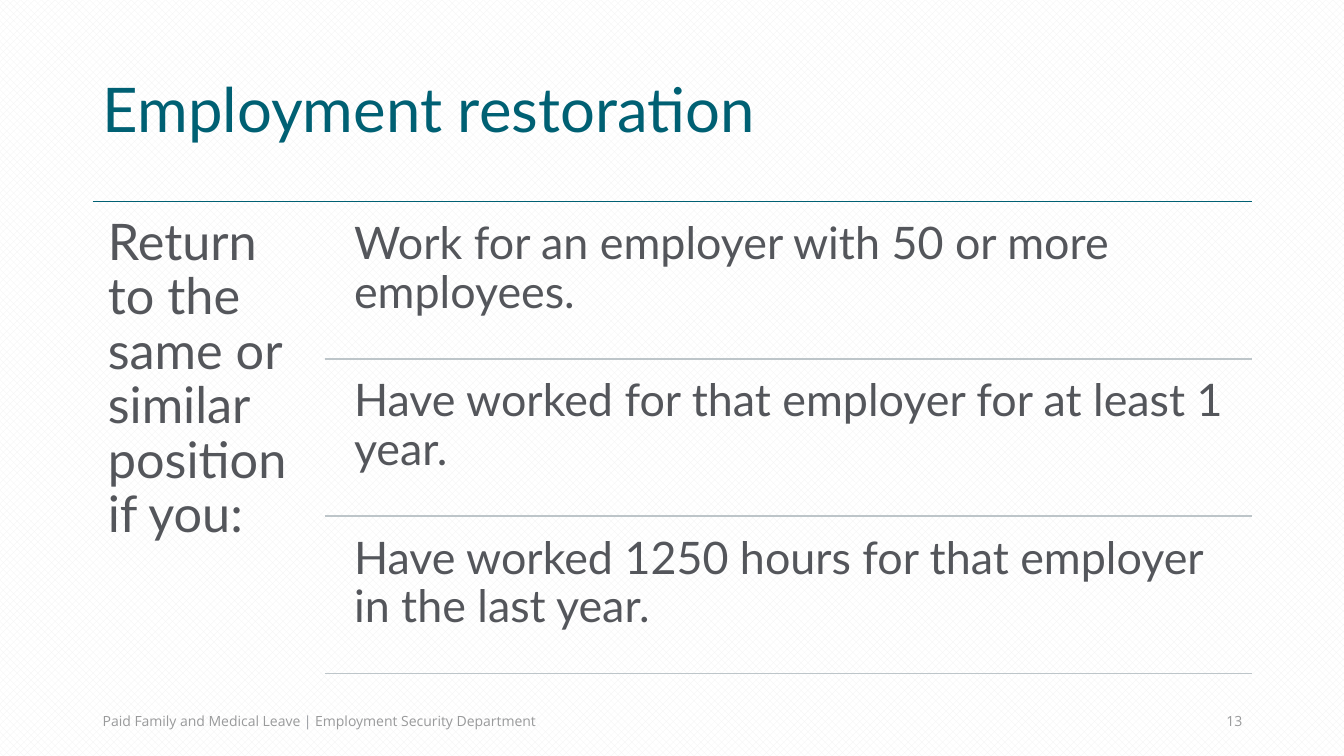
from dataclasses import dataclass

from lxml import etree
from pptx import Presentation
from pptx.dml.color import RGBColor
from pptx.enum.dml import MSO_PATTERN
from pptx.enum.shapes import MSO_CONNECTOR
from pptx.enum.text import MSO_ANCHOR, MSO_AUTO_SIZE, PP_ALIGN
from pptx.oxml.ns import qn
from pptx.util import Inches, Pt

DOTS = MSO_PATTERN.PERCENT_50
LINE = MSO_CONNECTOR.STRAIGHT
TOP, MIDDLE = MSO_ANCHOR.TOP, MSO_ANCHOR.MIDDLE
LEFT, RIGHT = PP_ALIGN.LEFT, PP_ALIGN.RIGHT
FIXED = MSO_AUTO_SIZE.NONE


@dataclass(frozen=True)
class Theme:
    teal: str = "006073"
    ink: str = "54565B"
    rule: str = "BDC5C9"
    muted: str = "999A9B"
    bar: str = "96999F"
    dot: str = "F2F2F2"
    paper: str = "FFFFFF"
    head: str = "Lato"
    small: str = "Open Sans"
    title: int = 44
    lead: int = 36
    item: int = 32
    foot: int = 10


@dataclass(frozen=True)
class Grid:
    left: float = 0.92
    top: float = 2
    col: float = 2.3
    row: float = 1.56

    def point(self, col, row):
        return Inches(self.left + col * self.col), Inches(self.top + row * self.row)

    def size(self, wide, high):
        return Inches(wide * self.col), Inches(high * self.row)


def write(shape, runs, font, size, color, anchor=TOP, align=LEFT, lead=1, inset=None):
    frame = shape.text_frame
    frame.word_wrap = True
    frame.auto_size = FIXED
    frame.vertical_anchor = anchor
    if inset is not None:
        frame.margin_left = frame.margin_right = Inches(inset)
        frame.margin_top = frame.margin_bottom = Inches(inset)
    para = frame.paragraphs[0]
    para.alignment = align
    para.line_spacing = lead
    para.space_before = Pt(0)
    for text, tint in [(runs, color)] if isinstance(runs, str) else runs:
        run = para.add_run()
        run.text = text
        run.font.name = font
        run.font.size = Pt(size)
        run.font.color.rgb = RGBColor.from_string(tint)
    return para


class Page:
    def __init__(self, deck, theme, grid):
        self.theme = theme
        self.grid = grid
        self.slide = deck.slides.add_slide(deck.slide_layouts[1])
        fill = self.slide.background.fill
        fill.patterned()
        fill.pattern = DOTS
        fill.fore_color.rgb = RGBColor.from_string(theme.dot)
        fill.back_color.rgb = RGBColor.from_string(theme.paper)

    def place(self, shape, col, row, wide, high):
        shape.left, shape.top = self.grid.point(col, row)
        shape.width, shape.height = self.grid.size(wide, high)
        return shape

    def title(self, text, *area):
        shape = self.place(self.slide.shapes.title, *area)
        write(shape, text, self.theme.head, self.theme.title, self.theme.teal,
              anchor=MIDDLE, lead=0.9)

    def body(self, text, *area):
        shape = self.place(self.slide.placeholders[1], *area)
        para = write(shape, text, self.theme.head, self.theme.lead, self.theme.ink,
                     lead=0.9, inset=0.15)
        props = para._p.get_or_add_pPr()
        props.set("marL", "0")
        props.set("indent", "0")
        etree.SubElement(props, qn("a:buNone"))

    def text(self, runs, *area, **style):
        box = self.slide.shapes.add_textbox(
            *self.grid.point(*area[:2]), *self.grid.size(*area[2:]))
        write(box, runs, **style)

    def rule(self, start, end, row, color):
        line = self.slide.shapes.add_connector(
            LINE, *self.grid.point(start, row), *self.grid.point(end, row))
        line.line.color.rgb = RGBColor.from_string(color)
        line.line.width = Pt(1)
        etree.SubElement(line._element.spPr, qn("a:effectLst"))


def main():
    deck = Presentation()
    deck.slide_width, deck.slide_height = Inches(13.33), Inches(7.5)
    theme = Theme()
    page = Page(deck, theme, Grid())

    page.title("Employment restoration", 0, -1.03, 5, 0.93)
    page.rule(0, 5, 0, theme.teal)
    page.body("Return to the same or similar position if you:", 0, 0, 1, 3.05)

    items = [
        "Work for an employer with 50 or more employees.",
        "Have worked for that employer for at least 1 year.",
        "Have worked 1250 hours for that employer in the last year.",
    ]
    for row, item in enumerate(items):
        page.text(item, 1.07, row + 0.04, 3.93, 0.96, font=theme.head,
                  size=theme.item, color=theme.ink, lead=0.9, inset=0.13)
        page.rule(1, 5, row + 1, theme.rule)

    foot = {"font": theme.small, "size": theme.foot, "color": theme.muted,
            "anchor": MIDDLE}
    credit = [
        ("Paid Family and Medical Leave ", theme.muted),
        ("|", theme.bar),
        (" Employment Security Department", theme.muted),
    ]
    page.text(credit, 0, 3.17, 3.48, 0.26, **foot)
    page.text("13", 3.7, 3.17, 1.3, 0.26, align=RIGHT, **foot)
    deck.save("out.pptx")


if __name__ == "__main__":
    main()
